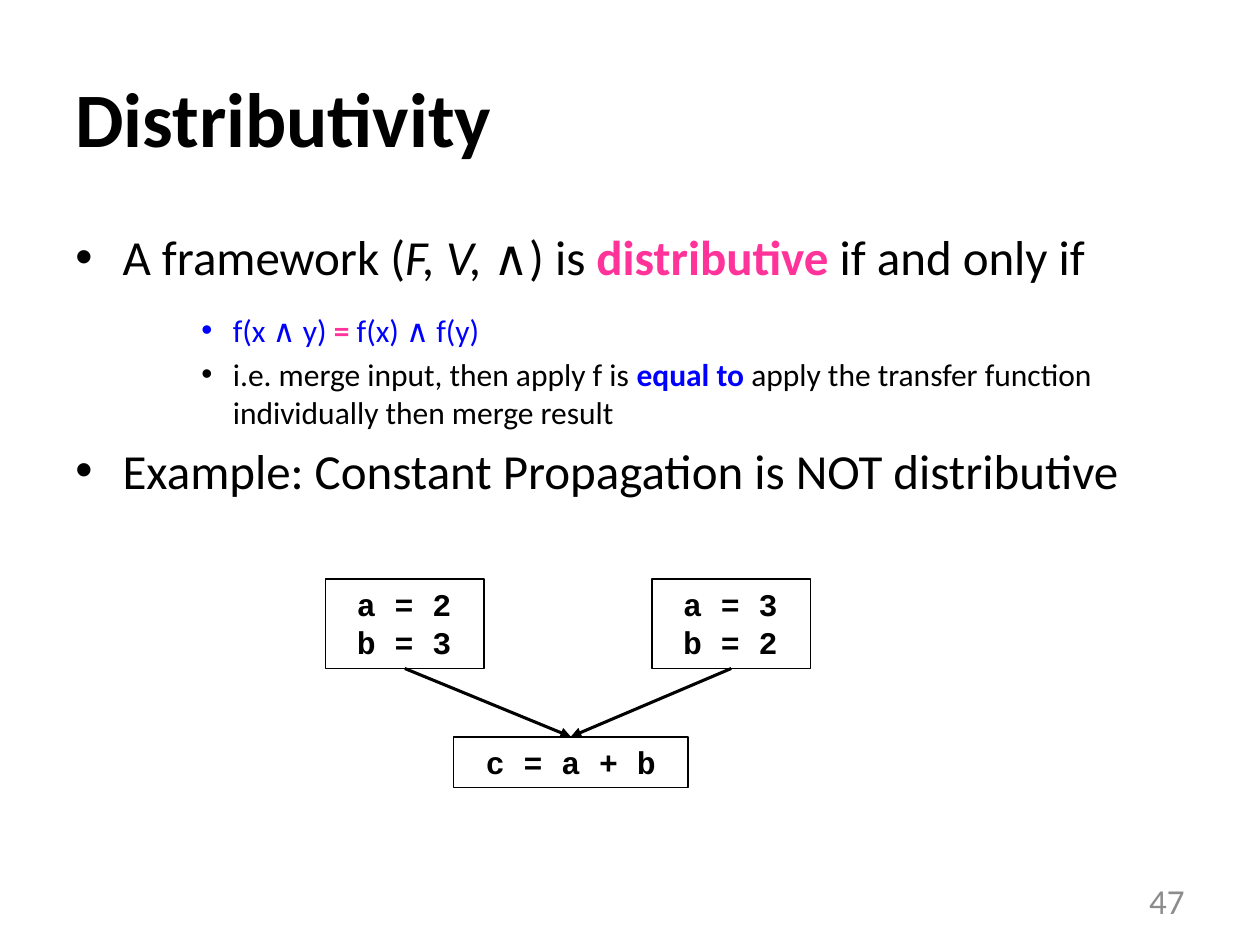
from dataclasses import dataclass

from lxml import etree
from pptx import Presentation
from pptx.dml.color import RGBColor
from pptx.enum.shapes import MSO_CONNECTOR, MSO_SHAPE
from pptx.enum.text import MSO_ANCHOR, MSO_AUTO_SIZE, PP_ALIGN
from pptx.oxml.ns import qn
from pptx.util import Pt

RECT = MSO_SHAPE.RECTANGLE
STRAIGHT = MSO_CONNECTOR.STRAIGHT
TOP, MIDDLE = MSO_ANCHOR.TOP, MSO_ANCHOR.MIDDLE
FIT_SHAPE = MSO_AUTO_SIZE.SHAPE_TO_FIT_TEXT
LEFT, CENTER, RIGHT = PP_ALIGN.LEFT, PP_ALIGN.CENTER, PP_ALIGN.RIGHT
TOP_SITE, BOTTOM_SITE = 0, 2


@dataclass(frozen=True)
class Theme:
    """Colours, fonts and type sizes of the slide."""
    black: str = "000000"
    blue: str = "0000FF"
    pink: str = "FF3399"
    grey: str = "8C8C8C"
    sans: str = "Calibri"
    mono: str = "Courier New"
    title: int = 44
    body: int = 28
    detail: int = 18
    number: int = 20


T = Theme()


def add_run(p, text, size, color=T.black, bold=False, italic=False, font=T.sans):
    """Append one formatted run to a paragraph."""
    r = p.add_run()
    r.text = text
    r.font.name, r.font.size = font, Pt(size)
    r.font.bold, r.font.italic = bold, italic
    r.font.color.rgb = RGBColor.from_string(color)


def add_text_frame(s, box, anchor=TOP):
    """Add a wrapping text box and return its text frame."""
    tf = s.shapes.add_textbox(*map(Pt, box)).text_frame
    tf.word_wrap = True
    tf.vertical_anchor = anchor
    return tf


def add_line_of_text(s, box, text, size, color=T.black, bold=False, align=LEFT):
    """Place a single line, vertically centred in the box."""
    p = add_text_frame(s, box, MIDDLE).paragraphs[0]
    p.alignment = align
    add_run(p, text, size, color, bold)


def set_bullet(p, margin, hanging):
    """Give a paragraph a hanging round bullet."""
    pPr = p._p.get_or_add_pPr()
    pPr.set("marL", str(Pt(margin)))
    pPr.set("indent", str(-Pt(hanging)))
    etree.SubElement(pPr, qn("a:buFont")).set("typeface", "Arial")
    etree.SubElement(pPr, qn("a:buChar")).set("char", "•")


def add_bullets(s, box):
    """Place the definition and the example as a two-level list."""
    top, sub = (T.body, 27, 27), (T.detail, 90, 18)
    items = [
        (top, 1, [("A framework (",), ("F, V, ", T.black, False, True), ("∧) is ",),
                  ("distributive", T.pink, True), (" if and only if",)]),
        (sub, 1.5, [("f(x ∧ y) ", T.blue), ("=", T.pink, True),
                    (" f(x) ∧ f(y)", T.blue)]),
        (sub, 1, [("i.e. merge input, then apply f is ",), ("equal to", T.blue, True),
                  (" apply the transfer function individually then merge result",)]),
        (top, 1, [("Example: Constant Propagation is NOT distributive",)]),
    ]
    tf = add_text_frame(s, box)
    for i, ((size, margin, hanging), spacing, runs) in enumerate(items):
        p = tf.add_paragraph() if i else tf.paragraphs[0]
        p.line_spacing = spacing
        p.space_before = Pt(0.2 * size)
        set_bullet(p, margin, hanging)
        for text, *style in runs:
            add_run(p, text, size, *style)


def add_code_block(s, box, lines, align=LEFT):
    """Draw an outlined block of code and return its shape."""
    sp = s.shapes.add_shape(RECT, *map(Pt, box))
    sp.shadow.inherit = False
    sp.fill.background()
    sp.line.color.rgb = RGBColor.from_string(T.black)
    sp.line.width = Pt(1)
    tf = sp.text_frame
    tf.word_wrap = False
    tf.auto_size = FIT_SHAPE
    tf.vertical_anchor = TOP
    for i, line in enumerate(lines):
        p = tf.add_paragraph() if i else tf.paragraphs[0]
        p.alignment = align
        add_run(p, line, T.detail, bold=True, font=T.mono)
    return sp


def add_arrow(s, source, target):
    """Join the bottom of one block to the top of another."""
    c = s.shapes.add_connector(STRAIGHT, 0, 0, 0, 0)
    c.begin_connect(source, BOTTOM_SITE)
    c.end_connect(target, TOP_SITE)
    c.line.color.rgb = RGBColor.from_string(T.black)
    c.line.width = Pt(1.75)
    etree.SubElement(c.line._get_or_add_ln(), qn("a:tailEnd")).set("type", "triangle")
    etree.SubElement(c._element.spPr, qn("a:effectLst"))


def add_flow_graph(s, box):
    """Place two branch blocks whose arrows meet at a merge block."""
    x, y, w, h = box
    branch_w, branch_h, merge_w, merge_h = 90.7, 51, 134, 29
    merge = add_code_block(s, (x + 73.2, y + h - merge_h, merge_w, merge_h),
                           [" c = a + b "], CENTER)
    branches = [(x, [" a = 2", " b = 3"]),
                (x + w - branch_w, [" a = 3", " b = 2"])]
    for left, lines in branches:
        add_arrow(s, add_code_block(s, (left, y, branch_w, branch_h), lines), merge)


def main():
    """Build and save the slide."""
    prs = Presentation()
    prs.slide_width, prs.slide_height = Pt(720), Pt(540)
    s = prs.slides.add_slide(prs.slide_layouts[6])
    add_line_of_text(s, (36, 21.6, 648, 90), "Distributivity", T.title, bold=True)
    add_bullets(s, (36, 126, 648, 356.4))
    add_flow_graph(s, (186, 331, 277.2, 119))
    add_line_of_text(s, (516, 500.4, 168, 28.8), "47", T.number, T.grey, align=RIGHT)
    prs.save("out.pptx")


if __name__ == "__main__":
    main()
